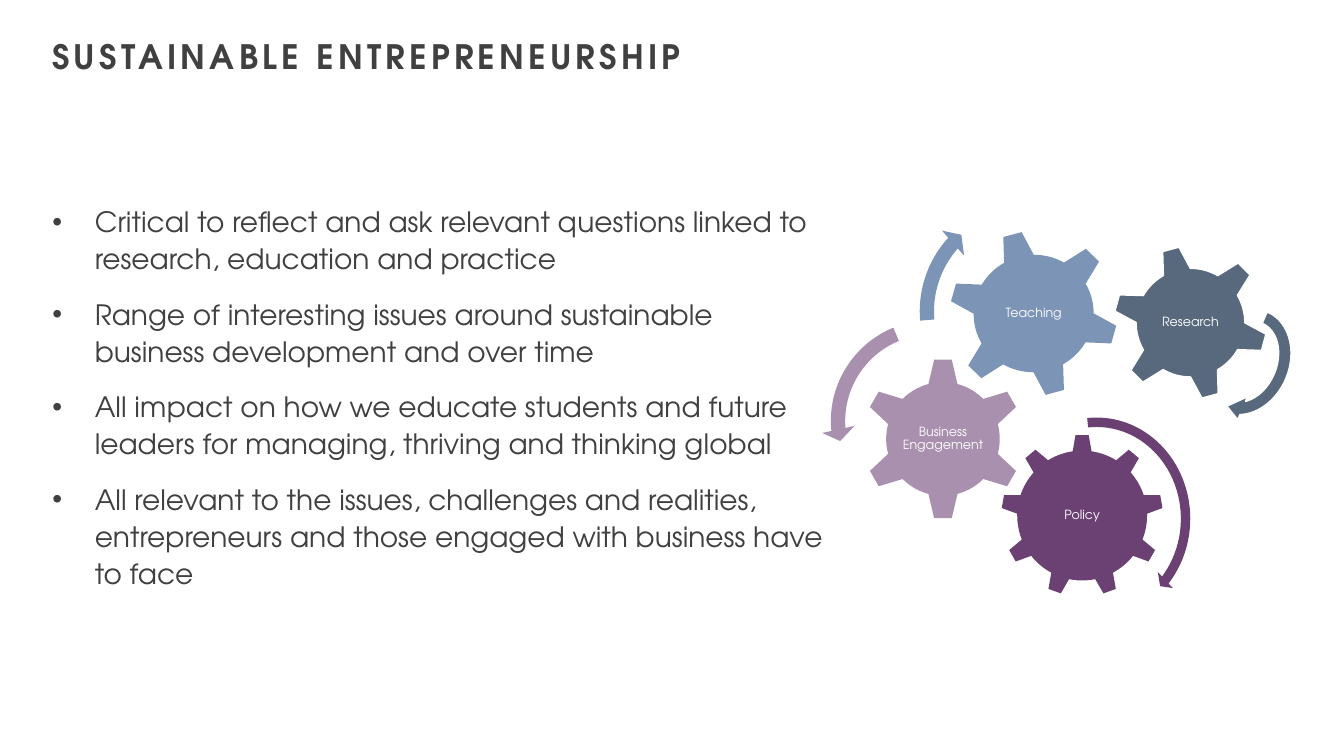
"""Build the sustainable entrepreneurship slide with its four linked gears."""
from pptx import Presentation
from pptx.dml.color import RGBColor
from pptx.enum.shapes import MSO_SHAPE as SHAPE
from pptx.enum.text import MSO_ANCHOR as ANCHOR, PP_ALIGN as ALIGN
from pptx.oxml.ns import qn
from pptx.util import Pt
from lxml.etree import SubElement

FONT = "TeX Gyre Adventor"
DARK, WHITE = "404040", "FFFFFF"
PURPLE, MAUVE, BLUE, SLATE = "6B4072", "A890AE", "7C95B6", "58697E"

prs = Presentation()
prs.slide_width, prs.slide_height = Pt(960), Pt(540)
s = prs.slides.add_slide(prs.slide_layouts[6])


def add_text(lines, box, size, color=DARK, bold=False, spacing=0, align=ALIGN.LEFT,
             anchor=ANCHOR.TOP, leading=0.9, gap=0, indent=0):
    tf = s.shapes.add_textbox(*map(Pt, box)).text_frame
    tf.word_wrap = True
    tf.vertical_anchor = anchor
    tf.margin_left = tf.margin_top = tf.margin_right = tf.margin_bottom = 0
    for i, line in enumerate(lines):
        p = tf.paragraphs[0] if i == 0 else tf.add_paragraph()
        p.alignment, p.line_spacing = align, leading
        if i:
            p.space_before = Pt(gap)
        if indent:
            pPr = p._p.get_or_add_pPr()
            pPr.set("marL", str(Pt(indent)))
            pPr.set("indent", str(-Pt(indent)))
            SubElement(pPr, qn("a:buFont")).set("typeface", "Arial")
            SubElement(pPr, qn("a:buChar")).set("char", "•")
        r = p.add_run()
        r.text = line
        r.font.name, r.font.size, r.font.bold = FONT, Pt(size), bold
        r.font.color.rgb = RGBColor.from_string(color)
        if spacing:
            r._r.get_or_add_rPr().set("spc", str(spacing * 100))


def add_piece(kind, box, color, rotation=0, outlined=False):
    sp = s.shapes.add_shape(kind, *map(Pt, box))
    sp.shadow.inherit = False
    sp.rotation = rotation
    sp.fill.solid()
    sp.fill.fore_color.rgb = RGBColor.from_string(color)
    if outlined:
        sp.line.color.rgb = RGBColor.from_string(WHITE)
        sp.line.width = Pt(1)
    else:
        sp.line.fill.background()
    return sp


add_text(["SUSTAINABLE ENTREPRENEURSHIP"], (37.4, 28.8, 884.9, 55.4), 24, bold=True, spacing=3)
add_text([
    "Critical to reflect and ask relevant questions linked to research, education and practice",
    "Range of interesting issues around sustainable business development and over time",
    "All impact on how we educate students and future leaders for managing, thriving and "
    "thinking global",
    "All relevant to the issues, challenges and realities, entrepreneurs and those engaged "
    "with business have to face",
], (37.4, 144, 555.8, 322.6), 20, leading=1.1, gap=13.3, indent=30.3)

arrows = [
    (SHAPE.CIRCULAR_ARROW, (712.1, 293.8, 142.6, 153.4), PURPLE, 4.7, (4.98, 41.82, 264.6), 5.5),
    (SHAPE.LEFT_CIRCULAR_ARROW, (586.8, 221.8, 158.4, 157.7), MAUVE,
     6.5, (7.17, 174.82, 247.3), 7.5),
    (SHAPE.CIRCULAR_ARROW, (650.2, 137.5, 169.9, 169.9), BLUE, 6, (6.57, 221.9, 175.14), 7),
]
for kind, box, color, thickness, angles, head in arrows:
    sp = add_piece(kind, box, color)
    values = [thickness / 100, *(angle * 0.6 for angle in angles), head / 100]
    for i, value in enumerate(values):
        sp.adjustments[i] = value
add_piece(SHAPE.CIRCULAR_ARROW, (846.7, 223.2, 86.4, 70.6), SLATE, 113.1, outlined=True)

gears = [
    ("Policy", SHAPE.GEAR_9, (715, 310.3, 115.9, 115.9), PURPLE, 0, (69.8, 59.8)),
    ("Business Engagement", SHAPE.GEAR_6, (615.6, 255.6, 115.9, 115.9), MAUVE, 0, (57.6, 57.6)),
    ("Teaching", SHAPE.GEAR_6, (677.5, 164.2, 121.7, 119.5), BLUE, 345, (67.7, 67.7)),
    ("Research", SHAPE.GEAR_6, (794.9, 175, 110.9, 110.9), SLATE, 345, (79.9, 79.9)),
]
for label, kind, box, color, rotation, (w, h) in gears:
    add_piece(kind, box, color, rotation, outlined=label == "Research")
    left, top, width, height = box
    add_text([label], (left + (width - w) / 2, top + (height - h) / 2, w, h), 9, color=WHITE,
             align=ALIGN.CENTER, anchor=ANCHOR.MIDDLE)

prs.save("out.pptx")
